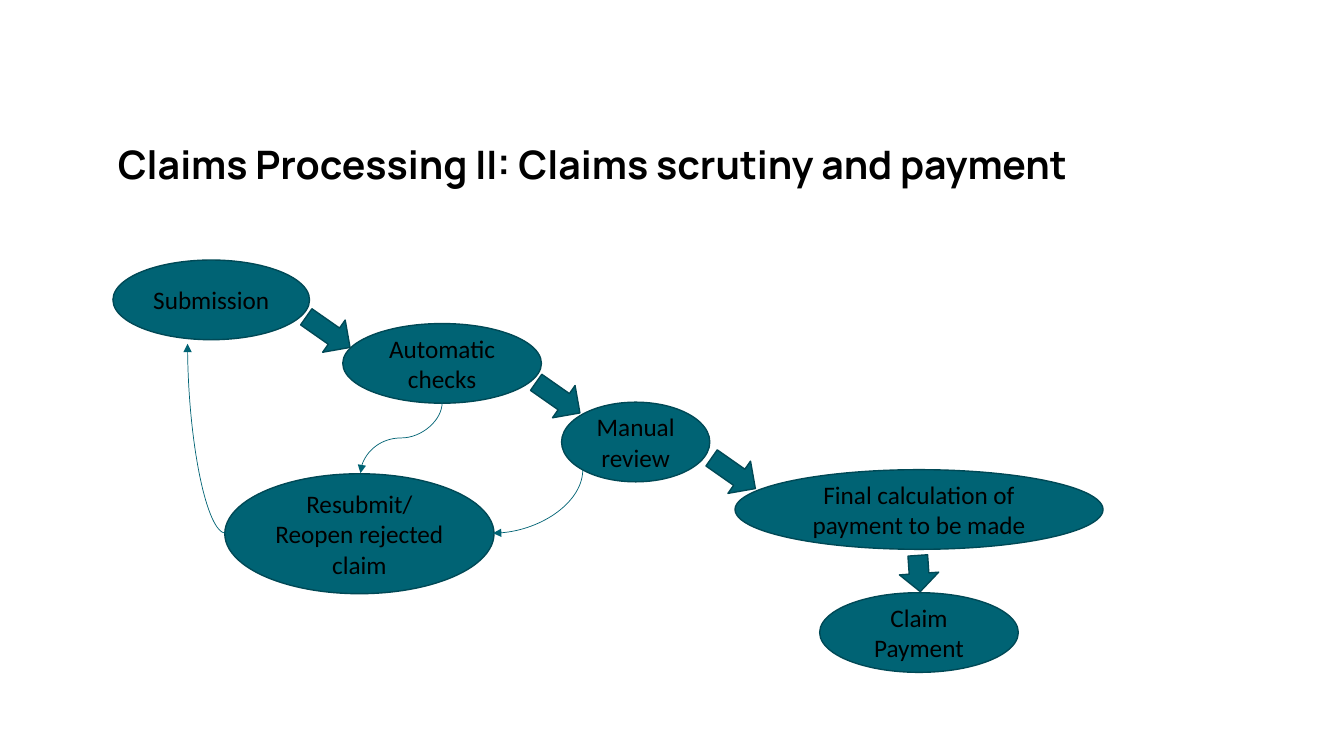
"""Build the claims scrutiny and payment flow slide."""
from lxml import etree
from pptx import Presentation
from pptx import util as u
from pptx.dml.color import RGBColor
from pptx.enum import shapes, text
from pptx.oxml import ns

PX = 9144
TEAL = RGBColor(0x00, 0x63, 0x74)
EDGE = RGBColor(0x00, 0x49, 0x56)
BLACK = RGBColor(0x00, 0x00, 0x00)
KIND = shapes.MSO_SHAPE

deck = Presentation()
deck.slide_width, deck.slide_height = 1333 * PX, 750 * PX
slide = deck.slides.add_slide(deck.slide_layouts[6])


def write(shape, words, size=18, face="Calibri", bold=False,
          align=text.PP_ALIGN.CENTER, anchor=text.MSO_ANCHOR.MIDDLE, space=1.0):
    frame = shape.text_frame
    frame.word_wrap = True
    frame.vertical_anchor = anchor
    para = frame.paragraphs[0]
    para.alignment = align
    para.line_spacing = space
    run = para.add_run()
    run.text = words
    run.font.size = u.Pt(size)
    run.font.name = face
    run.font.bold = bold
    run.font.color.rgb = BLACK


def draw(kind, box, turn=0):
    shape = slide.shapes.add_shape(kind, *[n * PX for n in box])
    shape.rotation = turn
    shape.shadow.inherit = False
    shape.fill.solid()
    shape.fill.fore_color.rgb = TEAL
    shape.line.color.rgb = EDGE
    shape.line.width = u.Pt(1)
    return shape


title = slide.shapes.add_textbox(*[n * PX for n in (107, 140, 1038, 105)])
write(title, "Claims Processing II: Claims scrutiny and payment", size=28,
      face="Manrope", bold=True, align=text.PP_ALIGN.LEFT,
      anchor=text.MSO_ANCHOR.TOP, space=0.9)

steps = [
    ("Submission", (112, 258, 195, 79)),
    ("Automatic checks", (340, 321, 197, 79)),
    ("Manual review", (557, 399, 147, 79)),
    ("Final calculation of payment to be made", (729, 466, 365, 79)),
    ("Claim Payment", (813, 588, 197, 79)),
    ("Resubmit/ Reopen rejected claim", (223, 470, 267, 119)),
]
for words, box in steps:
    write(draw(KIND.OVAL, box), words)

for left, top in [(306, 303), (534, 368), (708, 443)]:
    draw(KIND.DOWN_ARROW, (left, top, 39, 53), turn=305)
draw(KIND.DOWN_ARROW, (892, 551, 39, 36), turn=356.1)

curves = [
    ("curvedConnector2", (502, 453, 63, 89), 90),
    ("curvedConnector3", (363, 394, 70, 81), 90),
    ("curvedConnector2", (186, 341, 38, 188), 180),
]
for preset, (left, top, wide, high), turn in curves:
    ends = (left, top, left + wide, top + high)
    curve = slide.shapes.add_connector(shapes.MSO_CONNECTOR.CURVE, *[n * PX for n in ends])
    curve.line.color.rgb = TEAL
    curve.line.width = u.Pt(0.5)
    props = curve.element.spPr
    props.find(ns.qn("a:xfrm")).set("rot", str(turn * 60000))
    props.find(ns.qn("a:prstGeom")).set("prst", preset)
    etree.SubElement(props.find(ns.qn("a:ln")), ns.qn("a:tailEnd"), type="triangle")
    etree.SubElement(props, ns.qn("a:effectLst"))

deck.save("out.pptx")
